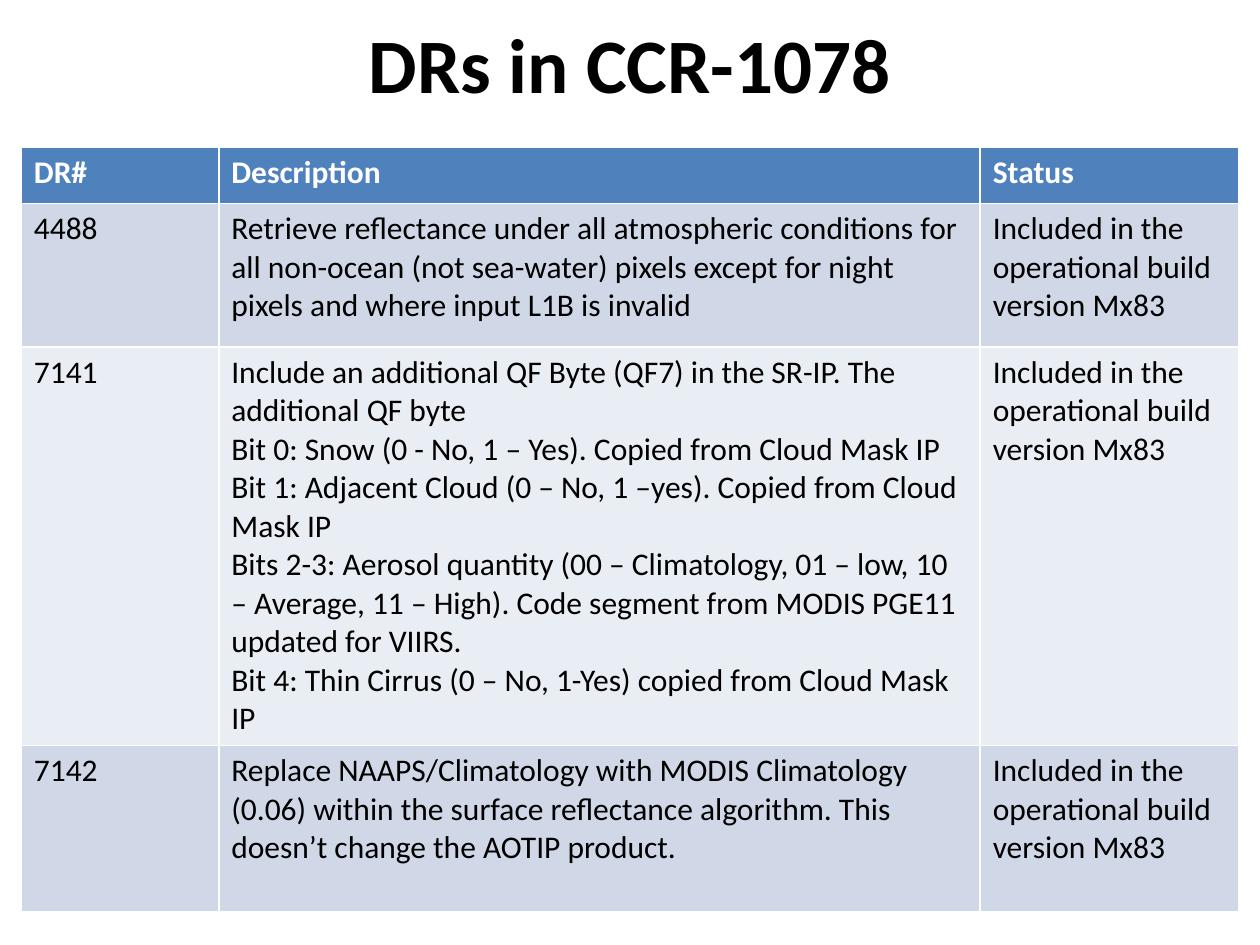
from dataclasses import dataclass

from pptx import Presentation
from pptx import util as u
from pptx.dml.color import RGBColor
from pptx.enum import text

FONT = "Calibri"
BLACK = RGBColor(0x00, 0x00, 0x00)
WHITE = RGBColor(0xFF, 0xFF, 0xFF)
HEADER_BLUE = RGBColor(0x4F, 0x81, 0xBD)
BANDS = (RGBColor(0xD0, 0xD8, 0xE8), RGBColor(0xE9, 0xED, 0xF4))

COLUMN_WIDTHS = (3.98, 15.35, 5.22)
INCLUDED = "Included in the operational build version Mx83"


@dataclass
class Row:
    height: float
    number: str
    description: str
    status: str = INCLUDED


HEADER = Row(1.13, "DR#", "Description", "Status")
REPORTS = [
    Row(2.9, "4488",
        "Retrieve reflectance under all atmospheric conditions for all non-ocean "
        "(not sea-water) pixels except for night pixels and where input L1B is invalid"),
    Row(8.03, "7141", "\n".join([
        "Include an additional QF Byte (QF7) in the SR-IP. The additional QF byte",
        "Bit 0: Snow (0 - No, 1 – Yes). Copied from Cloud Mask IP",
        "Bit 1: Adjacent Cloud (0 – No, 1 –yes). Copied from Cloud Mask IP",
        "Bits 2-3: Aerosol quantity (00 – Climatology, 01 – low, 10 – Average, "
        "11 – High). Code segment from MODIS PGE11 updated for VIIRS.",
        "Bit 4: Thin Cirrus (0 – No, 1-Yes) copied from Cloud Mask IP",
    ])),
    Row(3.35, "7142",
        "Replace NAAPS/Climatology with MODIS Climatology (0.06) within the surface "
        "reflectance algorithm. This doesn’t change the AOTIP product."),
]


def format_text(frame, size: float, color: RGBColor, bold: bool) -> None:
    for para in frame.paragraphs:
        for span in para.runs:
            span.font.name = FONT
            span.font.size = u.Pt(size)
            span.font.bold = bold
            span.font.color.rgb = color


def fill_row(table, index: int, row: Row, fill: RGBColor, color: RGBColor, bold: bool) -> None:
    table.rows[index].height = u.Cm(row.height)
    for cell, words in zip(table.rows[index].cells, (row.number, row.description, row.status)):
        cell.fill.solid()
        cell.fill.fore_color.rgb = fill
        cell.text_frame.text = words
        format_text(cell.text_frame, 18, color, bold)


def add_title(page, words: str) -> None:
    title = page.shapes.title
    title.left, title.top = u.Cm(1.27), u.Cm(0.2)
    title.width, title.height = u.Cm(22.86), u.Cm(2.11)
    frame = title.text_frame
    frame.text = words
    frame.vertical_anchor = text.MSO_ANCHOR.MIDDLE
    frame.paragraphs[0].alignment = text.PP_ALIGN.CENTER
    format_text(frame, 44, BLACK, True)


def add_report_table(page) -> None:
    # The default table style supplies the white cell borders
    rows = [HEADER, *REPORTS]
    table = page.shapes.add_table(
        len(rows), len(COLUMN_WIDTHS), u.Cm(0.43), u.Cm(2.97),
        u.Cm(sum(COLUMN_WIDTHS)), u.Cm(sum(row.height for row in rows))).table
    for column, width in zip(table.columns, COLUMN_WIDTHS):
        column.width = u.Cm(width)
    fill_row(table, 0, HEADER, HEADER_BLUE, WHITE, True)
    for index, row in enumerate(REPORTS):
        fill_row(table, index + 1, row, BANDS[index % 2], BLACK, False)


def main() -> None:
    deck = Presentation()
    deck.slide_width, deck.slide_height = u.Cm(25.4), u.Cm(19.05)
    page = deck.slides.add_slide(deck.slide_layouts.get_by_name("Title Only"))
    add_title(page, "DRs in CCR-1078")
    add_report_table(page)
    deck.save("out.pptx")


if __name__ == "__main__":
    main()
